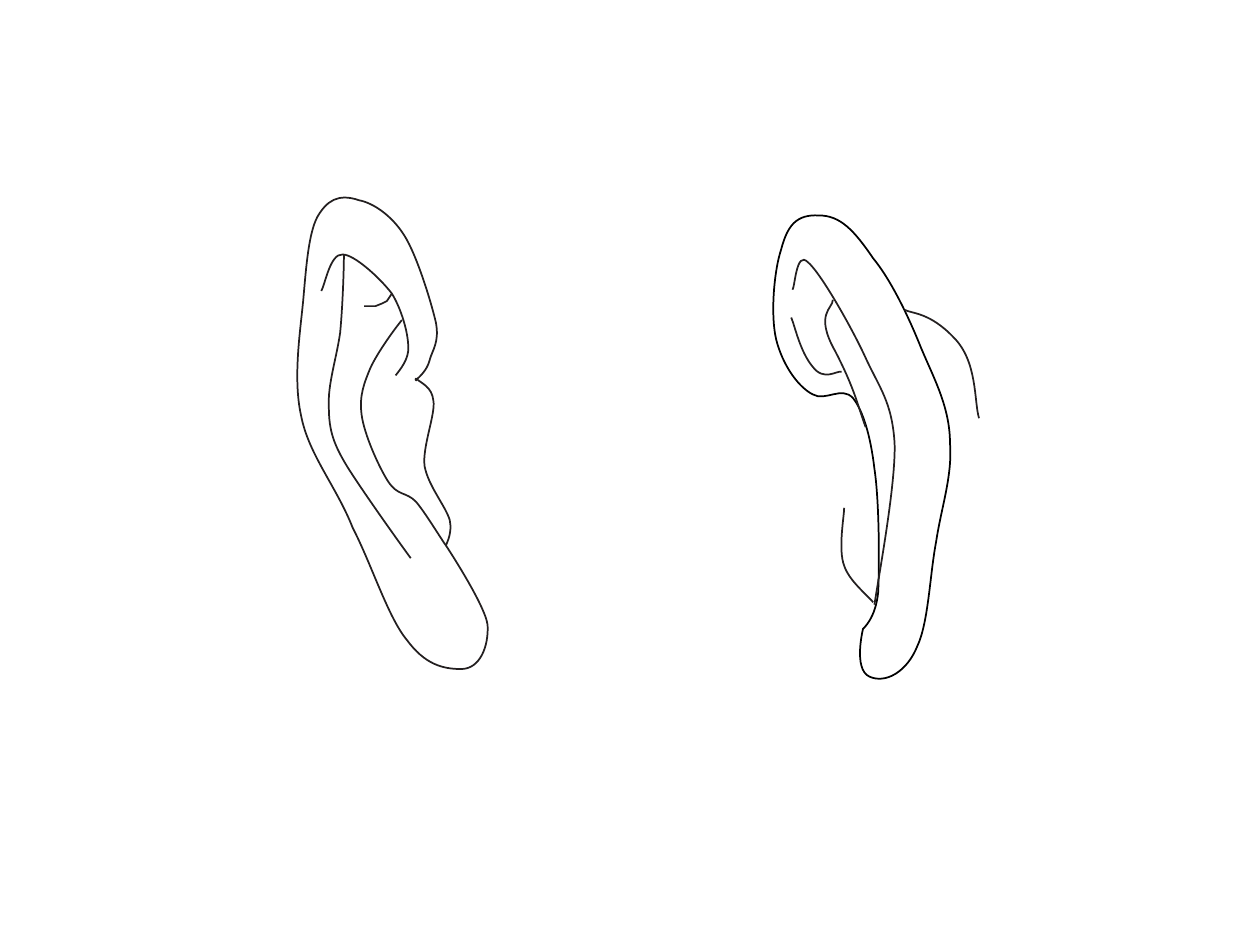
"""Draws two outlined ears, each a group of curved strokes."""
from dataclasses import dataclass

from lxml import etree
from pptx import Presentation
from pptx.dml.color import RGBColor
from pptx.oxml.ns import qn
from pptx.shapes.group import GroupShape
from pptx.util import Pt

PX = 9144
SLIDE_WIDTH, SLIDE_HEIGHT = 1000, 750
BLANK_LAYOUT = 6
CURVE_STEPS = 24

Point = tuple[int, int]
Segment = tuple[int, ...]


@dataclass(frozen=True)
class Theme:
    contour: RGBColor = RGBColor(0x01, 0x01, 0x01)
    ink: RGBColor = RGBColor(0x23, 0x1F, 0x20)
    line_width: Pt = Pt(1)


THEME = Theme()


@dataclass(frozen=True)
class Stroke:
    """A start point followed by cubic (six-number) or straight (two-number) segments."""
    start: Point
    segments: tuple[Segment, ...]
    color: RGBColor = THEME.ink
    closed: bool = False


RIGHT_EAR = (
    Stroke((685, 499), (
        (685, 499, 677, 531, 690, 537), (703, 543, 720, 533, 728, 513),
        (737, 494, 738, 456, 743, 430), (747, 403, 756, 378, 754, 352),
        (754, 323, 741, 300, 731, 276), (721, 251, 707, 222, 693, 205),
        (678, 183, 667, 171, 650, 171), (632, 170, 625, 179, 620, 198),
        (614, 216, 611, 254, 617, 273), (623, 293, 635, 308, 645, 313),
        (655, 319, 668, 306, 677, 316), (685, 326, 691, 346, 694, 372),
        (698, 398, 698, 449, 697, 470), (695, 491, 685, 499, 685, 499),
    ), THEME.contour, closed=True),
    Stroke((629, 230), (
        (631, 227, 632, 199, 641, 208), (651, 216, 676, 260, 687, 284),
        (698, 308, 708, 319, 710, 352), (711, 384, 698, 454, 694, 480),
    )),
    Stroke((628, 252), ((631, 259, 635, 279, 645, 291), (654, 303, 664, 294, 668, 295))),
    Stroke((661, 238), ((661, 245, 646, 249, 663, 279), (679, 310, 681, 323, 687, 339))),
    Stroke((670, 403), ((670, 410, 665, 436, 670, 449), (674, 461, 688, 472, 693, 478))),
    Stroke((718, 246), ((724, 249, 738, 248, 757, 268), (776, 287, 773, 319, 777, 332))),
)

LEFT_EAR = (
    Stroke((366, 531), (
        (351, 531, 337, 527, 323, 508), (308, 490, 295, 448, 280, 419),
        (267, 386, 245, 361, 239, 330), (232, 299, 239, 259, 241, 235),
        (243, 212, 245, 185, 252, 172), (259, 160, 268, 153, 285, 159),
        (296, 161, 311, 171, 321, 187), (331, 203, 342, 239, 346, 256),
        (349, 272, 343, 278, 341, 286), (339, 294, 333, 299, 331, 301),
        (330, 304, 329, 299, 331, 301), (334, 304, 343, 307, 344, 318),
        (346, 328, 335, 355, 337, 370), (340, 386, 354, 402, 357, 413),
        (359, 423, 355, 430, 354, 433), (354, 433, 385, 480, 387, 496),
        (388, 513, 381, 531, 366, 531),
    ), closed=True),
    Stroke((255, 231), (
        (258, 226, 262, 201, 272, 202), (281, 202, 301, 220, 311, 233),
        (319, 246, 324, 265, 324, 275), (325, 285, 317, 294, 314, 298),
    )),
    Stroke((273, 202), (
        (273, 213, 272, 243, 270, 264), (267, 285, 260, 305, 261, 323),
        (261, 342, 265, 353, 276, 371), (288, 390, 315, 428, 326, 443),
    )),
    Stroke((319, 254), (
        (314, 260, 300, 279, 294, 292), (289, 304, 285, 314, 287, 329),
        (289, 345, 301, 371, 308, 382), (316, 394, 322, 390, 330, 398),
        (337, 406, 349, 426, 354, 433),
    )),
    Stroke((311, 233), ((307, 239), (303, 241), (298, 243), (289, 243))),
)


def as_points(segment: Segment) -> list[Point]:
    """Pair up the flat coordinates of a segment."""
    return list(zip(segment[::2], segment[1::2]))


def bounds(stroke: Stroke) -> tuple[int, int, int, int]:
    """Return left, top, right and bottom of the drawn stroke."""
    pen, drawn = stroke.start, [stroke.start]
    for segment in stroke.segments:
        points = as_points(segment)
        if len(points) == 3:
            for step in range(1, CURVE_STEPS):
                t = step / CURVE_STEPS
                weights = ((1 - t) ** 3, 3 * t * (1 - t) ** 2, 3 * t * t * (1 - t), t ** 3)
                drawn.append(tuple(
                    sum(weight * point[axis] for weight, point in zip(weights, (pen, *points)))
                    for axis in (0, 1)))
        pen = points[-1]
        drawn.append(pen)
    xs, ys = zip(*drawn)
    return round(min(xs)), round(min(ys)), round(max(xs)), round(max(ys))


def draw_stroke(ear: GroupShape, stroke: Stroke) -> None:
    """Add one unfilled stroke to an ear."""
    left, top, right, bottom = bounds(stroke)
    builder = ear.shapes.build_freeform(left, top, scale=PX)
    builder.add_line_segments([(right, bottom)], close=False)
    outline = builder.convert_to_shape()
    outline.shadow.inherit = False
    outline.fill.background()
    outline.line.color.rgb = stroke.color
    outline.line.width = THEME.line_width

    geometry = outline.element.find(".//" + qn("a:path"))
    for diagonal_part in list(geometry):
        geometry.remove(diagonal_part)

    def add_command(tag: str, points: list[Point]) -> None:
        command = etree.SubElement(geometry, qn(tag))
        for x, y in points:
            etree.SubElement(command, qn("a:pt"), x=str(x - left), y=str(y - top))

    add_command("a:moveTo", [stroke.start])
    for segment in stroke.segments:
        points = as_points(segment)
        add_command("a:cubicBezTo" if len(points) == 3 else "a:lnTo", points)
    if stroke.closed:
        add_command("a:close", [])


def main() -> None:
    """Build and save the slide."""
    deck = Presentation()
    deck.slide_width, deck.slide_height = SLIDE_WIDTH * PX, SLIDE_HEIGHT * PX
    slide = deck.slides.add_slide(deck.slide_layouts[BLANK_LAYOUT])
    for strokes in (RIGHT_EAR, LEFT_EAR):
        ear = slide.shapes.add_group_shape()
        for stroke in strokes:
            draw_stroke(ear, stroke)
    deck.save("out.pptx")


if __name__ == "__main__":
    main()
